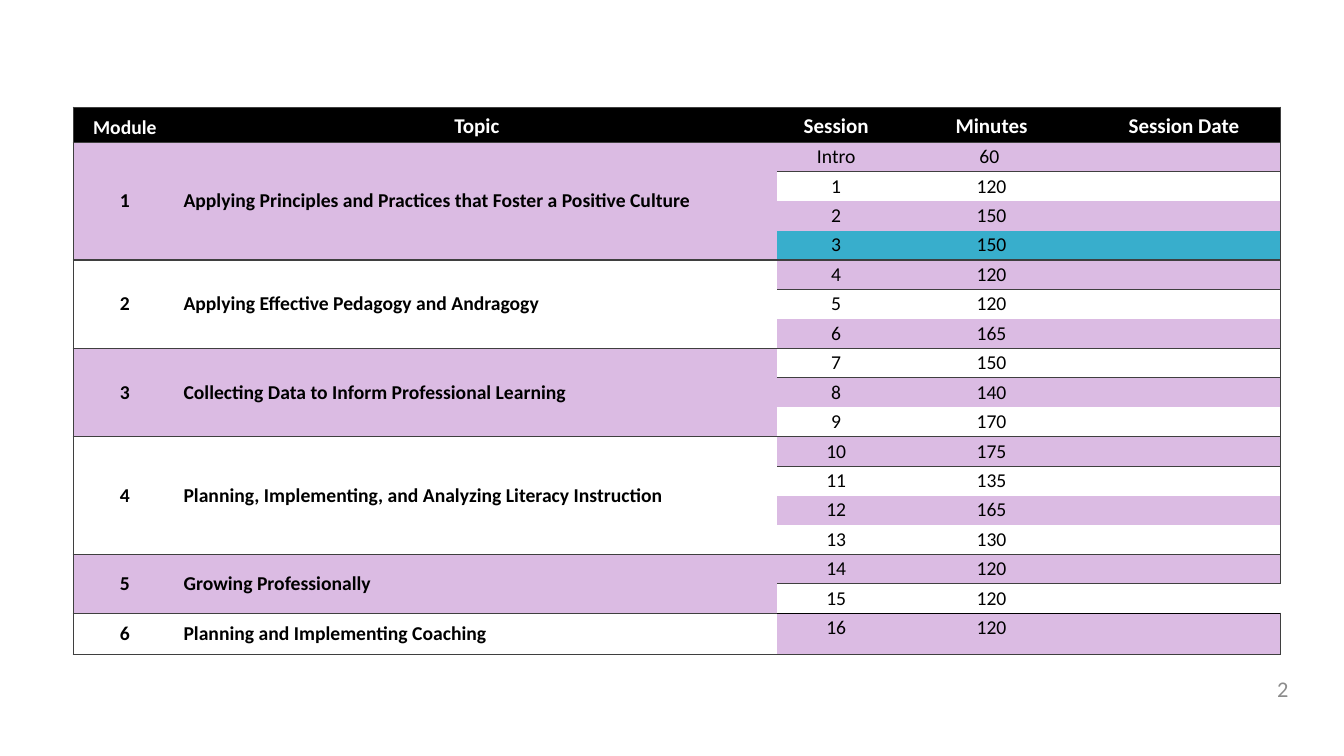
from lxml.etree import SubElement
from pptx import Presentation
from pptx.dml.color import RGBColor
from pptx.enum.text import MSO_ANCHOR, PP_ALIGN
from pptx.oxml.ns import qn
from pptx.util import Pt

# Content
HEADINGS = ["Module", "Topic", "Session", "Minutes", "Session Date"]
MODULES = [
    ("Applying Principles and Practices that Foster a Positive Culture",
     [("Intro", "60 "), ("1", "120"), ("2", "150"), ("3", "150")]),
    ("Applying Effective Pedagogy and Andragogy",
     [("4", "120"), ("5", "120"), ("6", "165")]),
    ("Collecting Data to Inform Professional Learning",
     [("7", "150"), ("8", "140"), ("9", "170")]),
    ("Planning, Implementing, and Analyzing Literacy Instruction",
     [("10", "175"), ("11", "135"), ("12", "165"), ("13", "130")]),
    ("Growing Professionally", [("14", "120"), ("15", "120")]),
    ("Planning and Implementing Coaching", [("16", "120")]),
]
PAGE_NUMBER = "2"
HIGHLIGHTED_SESSION = "3"
OPEN_SIDED_SESSION = "15"

# Format
BLACK, WHITE, LILAC, BLUE = "000000", "FFFFFF", "DBBBE3", "38AECC"
RULE_COLOR, NUMBER_COLOR = "3F3F3F", "8C8C8C"
FONT = "Calibri"
PLAIN_STYLE = "{2D5ABB26-0587-4C30-8999-92F81FD0307C}"
TABLE_LEFT, TABLE_TOP = 52.2, 76.6
COLUMN_WIDTHS = [73.9, 429, 84.4, 137.5, 137.5]
HEADER_HEIGHT, SESSION_HEIGHT, LAST_HEIGHT = 25, 21.06, 29.6
MODULE_MARGINS, TOPIC_MARGINS, SESSION_MARGINS = (5, 0), (5, 2), (4.5, 2)


def rgb(value):
    return RGBColor.from_string(value)


def set_text(frame, text, size, color, bold=False, align=PP_ALIGN.CENTER):
    paragraph = frame.paragraphs[0]
    paragraph.alignment = align
    if not text:
        SubElement(paragraph._p, qn("a:endParaRPr"), sz=str(size * 100))
        return
    run = paragraph.add_run()
    run.text = text
    for name, value in {"name": FONT, "size": Pt(size), "bold": bold}.items():
        setattr(run.font, name, value)
    run.font.color.rgb = rgb(color)


def set_borders(cell, borders):
    properties = cell._tc.get_or_add_tcPr()
    for side in "LRTB":
        if side in borders:
            line = SubElement(properties, qn(f"a:ln{side}"), w=str(Pt(1)))
            fill = SubElement(line, qn("a:solidFill"))
            SubElement(fill, qn("a:srgbClr"), val=borders[side])


def format_cell(cell, fill, borders, margins, anchor):
    set_borders(cell, borders)
    cell.fill.solid()
    cell.fill.fore_color.rgb = rgb(fill)
    side, edge = Pt(margins[0]), Pt(margins[1])
    for name, value in {"margin_left": side, "margin_right": side, "margin_top": edge,
                        "margin_bottom": edge, "vertical_anchor": anchor}.items():
        setattr(cell, name, value)


def outer_borders(column, top, bottom):
    shown = {"L": column == 0, "R": column == len(HEADINGS) - 1, "T": top, "B": bottom}
    return {side: RULE_COLOR for side, drawn in shown.items() if drawn}


def fill_header(table):
    for column, heading in enumerate(HEADINGS):
        cell = table.cell(0, column)
        format_cell(cell, BLACK, outer_borders(column, True, True),
                    SESSION_MARGINS, MSO_ANCHOR.BOTTOM)
        set_text(cell.text_frame, heading, 15 if column else 14, WHITE, True)


def fill_session(table, row, session, minutes, first, last):
    fill = LILAC if row % 2 else WHITE
    if session == HIGHLIGHTED_SESSION:
        fill = BLUE
    for column, text in enumerate([session, minutes, ""], start=2):
        borders = outer_borders(column, first, last)
        if session == OPEN_SIDED_SESSION:
            borders.pop("R", None)
            borders["B"] = BLACK
        elif row == len(table.rows) - 1:
            borders["T"] = BLACK
        cell = table.cell(row, column)
        format_cell(cell, fill, borders, SESSION_MARGINS, MSO_ANCHOR.TOP)
        set_text(cell.text_frame, text, 14, BLACK)


def fill_module(table, row, number, topic, count):
    fill = LILAC if number % 2 else WHITE
    labels = [(str(number), MODULE_MARGINS, PP_ALIGN.CENTER),
              (topic, TOPIC_MARGINS, PP_ALIGN.LEFT)]
    for column, (text, margins, align) in enumerate(labels):
        for offset in range(count):
            cell = table.cell(row + offset, column)
            borders = outer_borders(column, offset == 0, offset in (0, count - 1))
            format_cell(cell, fill, borders, margins, MSO_ANCHOR.MIDDLE)
            set_text(cell.text_frame, "" if offset else text, 14, BLACK, True, align)
        if count > 1:
            table.cell(row, column).merge(table.cell(row + count - 1, column))


def add_schedule(slide):
    session_count = sum(len(sessions) for _, sessions in MODULES)
    heights = [HEADER_HEIGHT] + [SESSION_HEIGHT] * (session_count - 1) + [LAST_HEIGHT]
    shape = slide.shapes.add_table(
        len(heights), len(HEADINGS), Pt(TABLE_LEFT), Pt(TABLE_TOP),
        Pt(sum(COLUMN_WIDTHS)), Pt(sum(heights)))
    table = shape.table
    table.horz_banding = False
    table._tbl.tblPr.find(qn("a:tableStyleId")).text = PLAIN_STYLE
    for column, width in zip(table.columns, COLUMN_WIDTHS):
        column.width = Pt(width)
    for row, height in zip(table.rows, heights):
        row.height = Pt(height)

    fill_header(table)
    start = 1
    for number, (topic, sessions) in enumerate(MODULES, start=1):
        count = len(sessions)
        for offset, (session, minutes) in enumerate(sessions):
            fill_session(table, start + offset, session, minutes,
                         offset == 0, offset == count - 1)
        fill_module(table, start, number, topic, count)
        start += count


def add_page_number(slide):
    box = slide.shapes.add_textbox(Pt(759.6), Pt(481), Pt(167.8), Pt(21.6))
    box.text_frame.word_wrap = True
    box.text_frame.vertical_anchor = MSO_ANCHOR.MIDDLE
    set_text(box.text_frame, PAGE_NUMBER, 16, NUMBER_COLOR, align=PP_ALIGN.RIGHT)


def main():
    presentation = Presentation()
    presentation.slide_width, presentation.slide_height = Pt(960), Pt(540)
    # The slide has no title, so the blank layout is used
    slide = presentation.slides.add_slide(presentation.slide_layouts[6])
    add_schedule(slide)
    add_page_number(slide)
    presentation.save("out.pptx")


if __name__ == "__main__":
    main()
